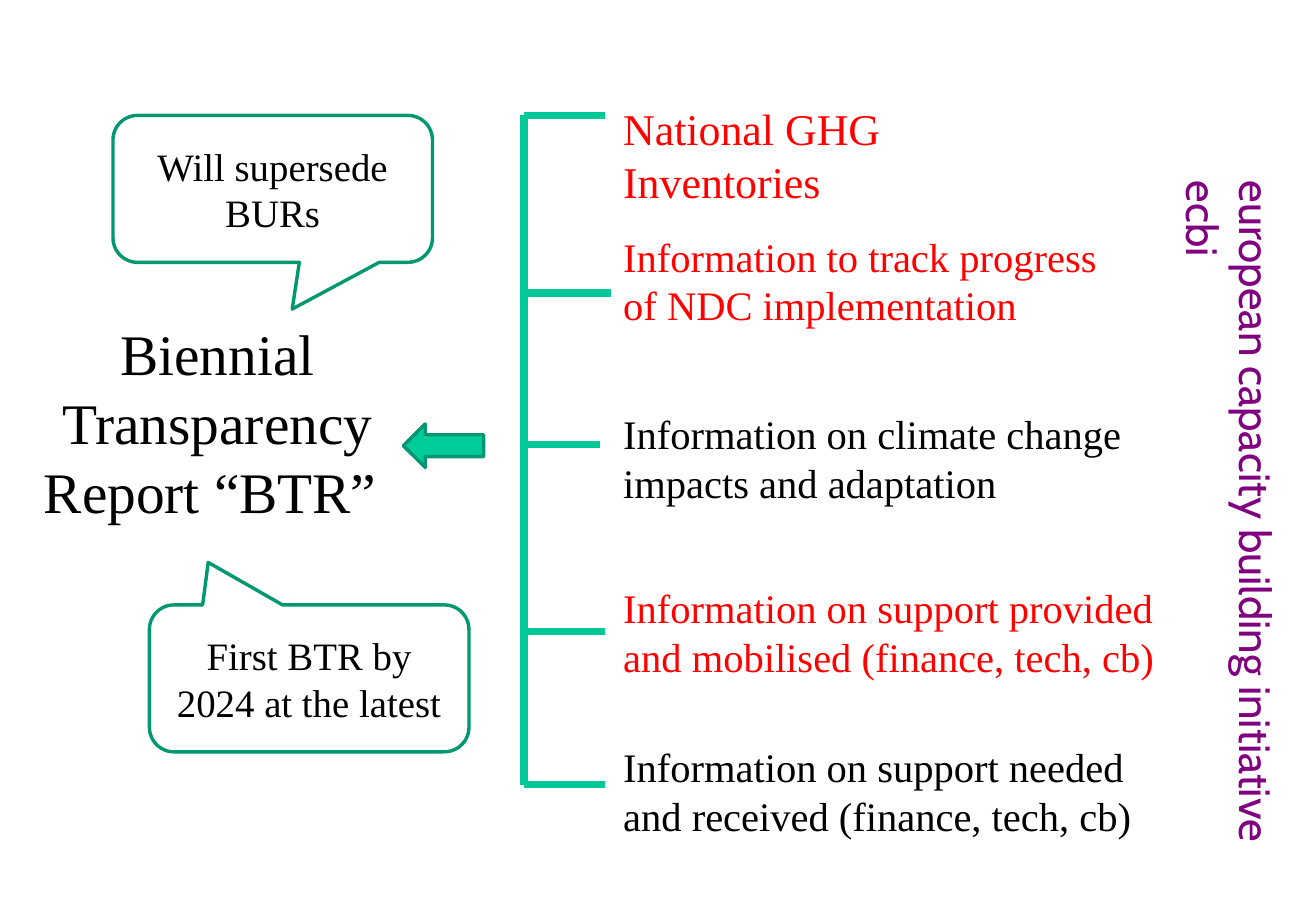
from dataclasses import dataclass
from pptx import Presentation
from pptx.dml.color import RGBColor as Rgb
from pptx.enum.shapes import MSO_CONNECTOR as Conn, MSO_SHAPE as Kind
from pptx.enum.text import MSO_ANCHOR as Anchor, PP_ALIGN as Align
from pptx.oxml.ns import qn
from pptx.shapes.autoshape import Shape
from pptx.text.text import TextFrame
from pptx.util import Inches, Pt
from lxml.etree import SubElement


@dataclass(frozen=True)
class Theme:
    serif: str = "Times New Roman"
    sans: str = "Cabin"
    black: str = "000000"
    white: str = "FFFFFF"
    red: str = "FF0000"
    purple: str = "800080"
    bar: str = "00C896"
    fill: str = "00CC99"
    edge: str = "009771"
    title: int = 34
    large: int = 26
    body: int = 24
    note: int = 23


@dataclass(frozen=True)
class Box:
    left: float
    top: float
    width: float
    height: float

    def emu(self) -> list[int]:
        return [Inches(n) for n in (self.left, self.top, self.width, self.height)]


@dataclass(frozen=True)
class Item:
    text: str
    box: Box
    color: str
    size: int
    bar_y: float
    bar_end: float


@dataclass(frozen=True)
class Note:
    text: str
    box: Box
    tip: tuple[float, float, float]


THEME = Theme()
SPINE = 4.31
TOP, BOTTOM = 0.95, 6.46
TEXT_X = 5.03

ITEMS = [
    Item("National GHG Inventories", Box(TEXT_X, 0.79, 4, 0.98),
         THEME.red, THEME.large, TOP, 4.98),
    Item("Information to track progress of NDC implementation",
         Box(TEXT_X, 1.86, 4.25, 0.91), THEME.red, THEME.body, 2.41, 5.03),
    Item("Information on climate change impacts and adaptation",
         Box(TEXT_X, 3.32, 4.72, 0.91), THEME.black, THEME.body, 3.66, 4.94),
    Item("Information on support provided and mobilised (finance, tech, cb)",
         Box(TEXT_X, 4.75, 4.72, 0.91), THEME.red, THEME.body, 5.2, 4.98),
    Item("Information on support needed and received (finance, tech, cb)",
         Box(TEXT_X, 6.06, 4.72, 0.91), THEME.black, THEME.body, BOTTOM, 4.98),
]
NOTES = [
    Note("First BTR by 2024 at the latest", Box(1.23, 4.98, 2.63, 1.21),
         (-0.316, -0.789, 0.167)),
    Note("Will supersede BURs", Box(0.93, TOP, 2.63, 1.21),
         (0.061, 0.818, 0.167)),
]

deck = Presentation()
deck.slide_width, deck.slide_height = Inches(10.83), Inches(7.5)
slide = deck.slides.add_slide(deck.slide_layouts[6])
shapes = slide.shapes


def write(frame: TextFrame, text: str, size: int, color: str = THEME.black,
          face: str = THEME.serif, align: Align = Align.LEFT,
          anchor: Anchor = Anchor.TOP) -> None:
    frame.word_wrap = True
    frame.vertical_anchor = anchor
    para = frame.paragraphs[0]
    para.text = text
    para.alignment = align
    para.font.name = face
    para.font.size = Pt(size)
    para.font.color.rgb = Rgb.from_string(color)


def add_text(box: Box, text: str, size: int, color: str,
             face: str = THEME.serif) -> TextFrame:
    frame = shapes.add_textbox(*box.emu()).text_frame
    write(frame, text, size, color, face)
    return frame


def add_shape(kind: Kind, box: Box, fill: str, edge: str) -> Shape:
    shape = shapes.add_shape(kind, *box.emu())
    shape.shadow.inherit = False
    shape.fill.solid()
    shape.fill.fore_color.rgb = Rgb.from_string(fill)
    shape.line.color.rgb = Rgb.from_string(edge)
    shape.line.width = Pt(2)
    return shape


def add_bar(x1: float, y1: float, x2: float, y2: float) -> None:
    ends = [Inches(n) for n in (x1, y1, x2, y2)]
    bar = shapes.add_connector(Conn.STRAIGHT, *ends)
    bar.line.color.rgb = Rgb.from_string(THEME.bar)
    bar.line.width = Pt(4.5)
    SubElement(bar._element.spPr, qn("a:effectLst"))


def main() -> None:
    side = add_text(Box(9.86, 1.39, 0.75, 5.99),
                    "european capacity building initiative ecbi",
                    THEME.large, THEME.purple, THEME.sans)
    side._txBody.bodyPr.set("vert", "eaVert")

    title = add_shape(Kind.RECTANGLE, Box(0.26, 2.57, 3.06, 1.82),
                      THEME.white, THEME.white)
    write(title.text_frame, "Biennial Transparency Report “BTR” ",
          THEME.title, align=Align.CENTER)

    add_bar(SPINE, TOP, SPINE, BOTTOM)
    for item in ITEMS:
        add_bar(SPINE, item.bar_y, item.bar_end, item.bar_y)
        add_text(item.box, item.text, item.size, item.color)

    add_shape(Kind.LEFT_ARROW, Box(3.32, 3.49, 0.66, 0.36),
              THEME.fill, THEME.edge)

    for note in NOTES:
        shape = add_shape(Kind.ROUNDED_RECTANGULAR_CALLOUT, note.box,
                          THEME.white, THEME.edge)
        for i, value in enumerate(note.tip):
            shape.adjustments[i] = value
        write(shape.text_frame, note.text, THEME.note,
              align=Align.CENTER, anchor=Anchor.MIDDLE)

    deck.save("out.pptx")


if __name__ == "__main__":
    main()
